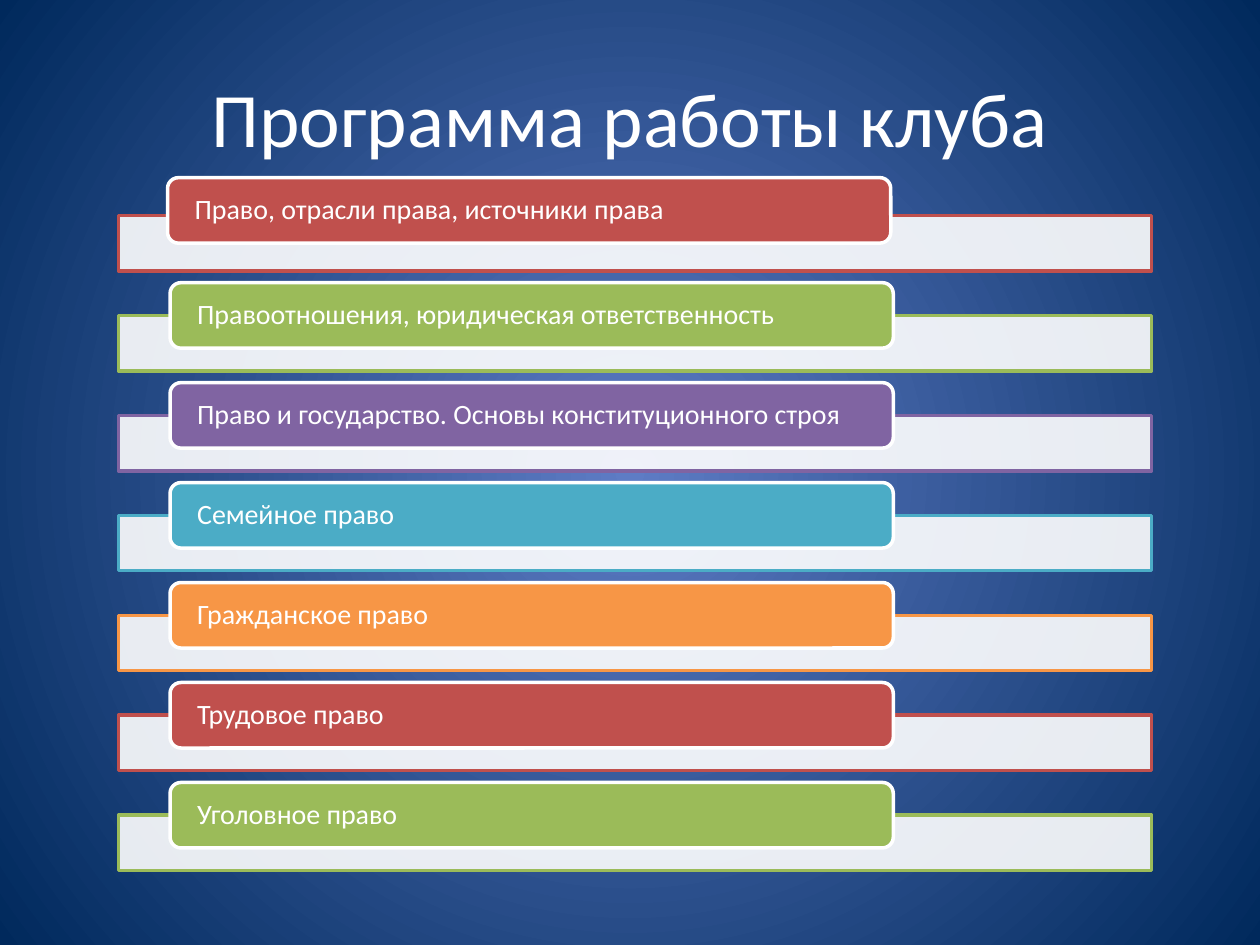
from lxml import etree
from pptx import Presentation, util as u
from pptx.dml.color import RGBColor
from pptx.enum import shapes, text
from pptx.oxml.ns import qn

WHITE = RGBColor(0xFF, 0xFF, 0xFF)
GLOW = RGBColor(0x5E, 0x7C, 0xC5)
NAVY = RGBColor(0x00, 0x29, 0x5C)
ACCENTS = [
    RGBColor(0xC0, 0x50, 0x4D),
    RGBColor(0x9B, 0xBB, 0x59),
    RGBColor(0x80, 0x64, 0xA2),
    RGBColor(0x4B, 0xAC, 0xC6),
    RGBColor(0xF7, 0x96, 0x46),
]
FONT = "Calibri"

TITLE = "Программа работы клуба"
TOPICS = [
    "Право, отрасли права, источники права",
    "Правоотношения, юридическая ответственность",
    "Право и государство. Основы конституционного строя",
    "Семейное право",
    "Гражданское право",
    "Трудовое право",
    "Уголовное право",
]

BAR_LEFT, BAR_WIDTH, BAR_HEIGHT = 0.94, 8.2, 0.44
FIRST_BAR, LAST_BAR = 1.71, 6.47
PITCH = (LAST_BAR - FIRST_BAR) / (len(TOPICS) - 1)
LABEL_LEFT, LABEL_WIDTH, LABEL_HEIGHT = 1.35, 5.74, 0.52
LABEL_RISE = 0.26
FIRST_LABEL_SHIFT = (-0.02, -0.04)  # the first label sits slightly off the grid


def paint_background(page):
    """Radial gradient, light in the centre and dark at the corners."""
    fill = page.background.fill
    fill.gradient()
    for stop, color, position in zip(fill.gradient_stops, (GLOW, NAVY), (0, 1)):
        stop.color.rgb = color
        stop.position = position
    gradient = page.element.find(".//" + qn("a:gradFill"))
    gradient.remove(gradient.find(qn("a:lin")))
    circle = etree.SubElement(gradient, qn("a:path"), {"path": "circle"})
    etree.SubElement(circle, qn("a:fillToRect"), dict.fromkeys("ltrb", "50000"))


def write(shape, words, size, align, inset=0.1, line_spacing=None):
    frame = shape.text_frame
    frame.word_wrap = True
    frame.vertical_anchor = text.MSO_ANCHOR.MIDDLE
    frame.margin_left = frame.margin_right = u.Inches(inset)
    frame.margin_top = frame.margin_bottom = 0
    para = frame.paragraphs[0]
    para.alignment = align
    para.line_spacing = line_spacing
    span = para.add_run()
    span.text = words
    span.font.name = FONT
    span.font.size = u.Pt(size)
    span.font.color.rgb = WHITE


def add_box(page, kind, place, fill, line, opacity=100):
    box = page.shapes.add_shape(kind, *map(u.Inches, place))
    box.shadow.inherit = False
    box.fill.solid()
    box.fill.fore_color.rgb = fill
    box.line.color.rgb = line
    box.line.width = u.Pt(2)
    if opacity < 100:
        color = box.element.spPr.find(qn("a:solidFill"))[0]
        etree.SubElement(color, qn("a:alpha"), val=str(opacity * 1000))
    return box


def main():
    deck = Presentation()
    deck.slide_width, deck.slide_height = u.Inches(10), u.Inches(7.5)
    page = deck.slides.add_slide(deck.slide_layouts[5])
    paint_background(page)

    title = page.shapes.title
    title.left, title.top, title.width, title.height = map(u.Inches, (0.5, 0.3, 9, 1.25))
    write(title, TITLE, 44, text.PP_ALIGN.CENTER)

    for row, topic in enumerate(TOPICS):
        accent = ACCENTS[row % len(ACCENTS)]
        top = FIRST_BAR + row * PITCH
        shift_x, shift_y = (0, 0) if row else FIRST_LABEL_SHIFT
        add_box(page, shapes.MSO_SHAPE.RECTANGLE,
                (BAR_LEFT, top, BAR_WIDTH, BAR_HEIGHT), WHITE, accent, opacity=90)
        label = add_box(page, shapes.MSO_SHAPE.ROUNDED_RECTANGLE,
                        (LABEL_LEFT + shift_x, top - LABEL_RISE + shift_y,
                         LABEL_WIDTH, LABEL_HEIGHT), accent, WHITE)
        write(label, topic, 16, text.PP_ALIGN.LEFT, inset=0.19, line_spacing=0.9)

    deck.save("out.pptx")


if __name__ == "__main__":
    main()
